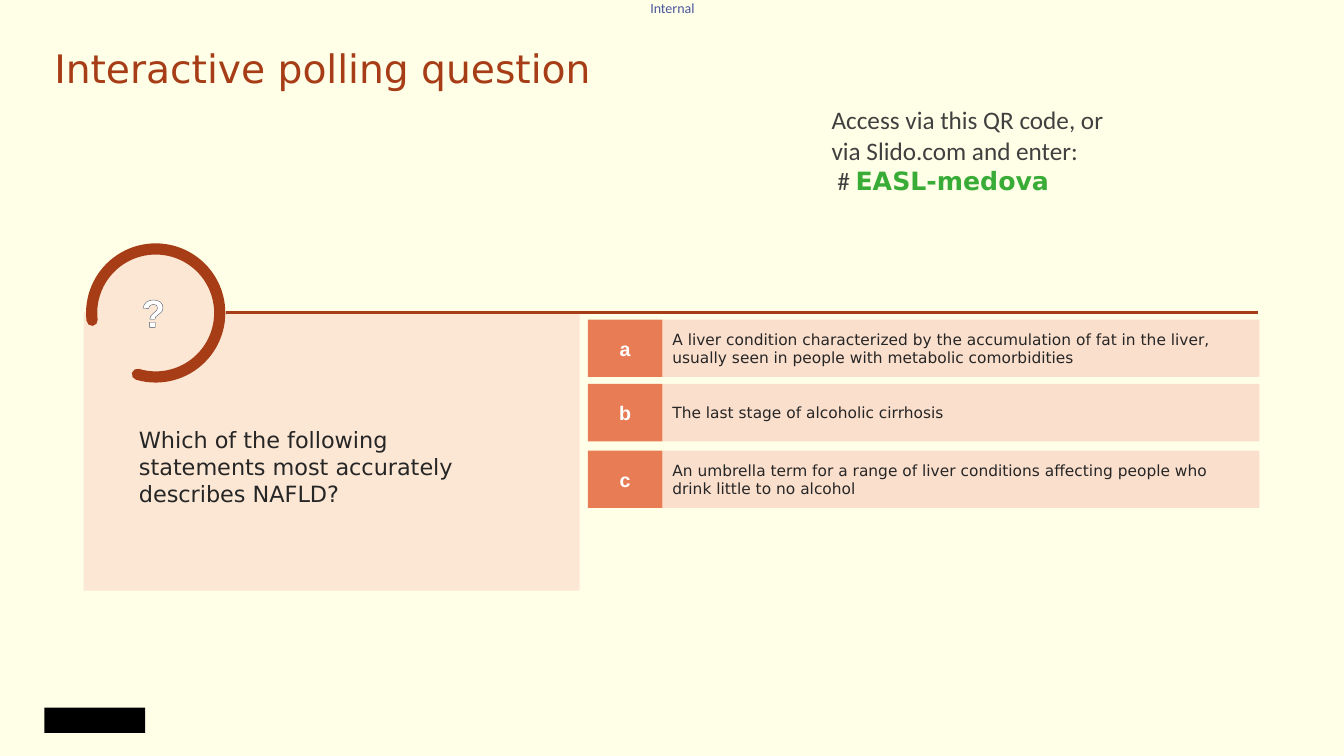
from lxml import etree
from pptx import Presentation
from pptx.dml.color import RGBColor as Rgb
from pptx.enum.shapes import MSO_CONNECTOR as Connector, MSO_SHAPE as Preset
from pptx.enum.text import MSO_ANCHOR as Anchor, PP_ALIGN as Align
from pptx.oxml.ns import qn
from pptx.util import Inches, Pt

THEME = {
    "background": "FFFFE7",
    "rust": "A63D16",
    "panel": "FCE7D4",
    "answer": "FBDFCD",
    "letter": "E87C54",
    "logo": "000000",
    "outline": "44546A",
    "label": {"name": "Calibri", "size": 10, "color": "4A569E"},
    "title": {"name": "DejaVu Sans", "size": 28, "color": "A63D16"},
    "access": {"name": "Calibri", "size": 18, "color": "404040"},
    "code": {"name": "DejaVu Sans", "size": 18, "color": "39AC37", "bold": True},
    "mark": {"name": "Arial", "size": 28, "color": "FFFFFF", "bold": True},
    "question": {"name": "DejaVu Sans", "size": 16, "color": "262626"},
    "answer_text": {"name": "DejaVu Sans", "size": 11, "color": "262626"},
    "letter_text": {"name": "Arial", "size": 14, "color": "FFFFFF", "bold": True},
}

presentation = Presentation()
presentation.slide_width = Inches(13.33)
presentation.slide_height = Inches(7.5)
slide = presentation.slides.add_slide(presentation.slide_layouts[6])
slide.background.fill.solid()
slide.background.fill.fore_color.rgb = Rgb.from_string(THEME["background"])


def add_block(preset, box, fill=None):
    shape = slide.shapes.add_shape(preset, *map(Inches, box))
    shape.shadow.inherit = False
    shape.line.fill.background()
    if fill:
        shape.fill.solid()
        shape.fill.fore_color.rgb = Rgb.from_string(THEME[fill])
    else:
        shape.fill.background()
    return shape


def write(shape, parts, align=Align.LEFT, **frame_format):
    frame = shape.text_frame
    for name, value in {"word_wrap": True, **frame_format}.items():
        setattr(frame, name, value)
    paragraph = frame.paragraphs[0]
    paragraph.alignment = align
    for text, style in parts:
        for index, line in enumerate(text.split("\n")):
            if index:
                paragraph.add_line_break()
            run = paragraph.add_run()
            run.text = line
            values = dict(THEME[style])
            run.font.color.rgb = Rgb.from_string(values.pop("color"))
            values["size"] = Pt(values["size"])
            for name, value in values.items():
                setattr(run.font, name, value)
    return paragraph


add_block(Preset.RECTANGLE, (0.44, 7.02, 1, 0.25), "logo")

no_margins = dict.fromkeys(("margin_left", "margin_top", "margin_right", "margin_bottom"), 0)
text_boxes = [
    ((6.45, 0, 0.47, 0.17), [("Internal", "label")], {"word_wrap": False, **no_margins}),
    ((0.44, 0.39, 12.43, 0.57), [("Interactive polling question", "title")],
     {"vertical_anchor": Anchor.MIDDLE}),
    ((8.15, 0.99, 2.93, 1.01),
     [("Access via this QR code, or\nvia Slido.com and enter:\n # ", "access"),
      ("EASL-medova", "code")], {}),
]
for box, parts, frame_format in text_boxes:
    write(slide.shapes.add_textbox(*map(Inches, box)), parts, **frame_format)

add_block(Preset.RECTANGLE, (0.83, 3.1, 4.92, 2.76), "panel")

rule = slide.shapes.add_connector(
    Connector.STRAIGHT, Inches(2.24), Inches(3.1), Inches(12.48), Inches(3.1))
rule.line.color.rgb = Rgb.from_string(THEME["rust"])
rule.line.width = Pt(2.25)
etree.SubElement(rule._element.spPr, qn("a:effectLst"))

add_block(Preset.OVAL, (0.97, 2.52, 1.15, 1.15), "panel")

ring = add_block(Preset.ARC, (0.91, 2.47, 1.27, 1.27))
ring.adjustments[0] = 173.4 * 0.6
ring.adjustments[1] = 106.6 * 0.6
ring.line.color.rgb = Rgb.from_string(THEME["rust"])
ring.line.width = Pt(8)
ring.line._ln.set("cap", "rnd")

mark_box = slide.shapes.add_textbox(Inches(1.3), Inches(2.81), Inches(0.44), Inches(0.57))
mark = write(mark_box, [("?", "mark")], Align.CENTER, word_wrap=False)
outline = etree.Element(qn("a:ln"), w=str(Pt(0.8)))
outline_fill = etree.SubElement(outline, qn("a:solidFill"))
etree.SubElement(outline_fill, qn("a:srgbClr"), val=THEME["outline"])
mark.runs[0].font._element.insert(0, outline)

question_box = slide.shapes.add_textbox(Inches(1.28), Inches(4.17), Inches(3.84), Inches(0.91))
write(question_box,
      [("Which of the following statements most accurately describes NAFLD?", "question")],
      vertical_anchor=Anchor.MIDDLE)

answers = [
    ("a", 3.17, "A liver condition characterized by the accumulation of fat in the liver, "
                "usually seen in people with metabolic comorbidities"),
    ("b", 3.81, "The last stage of alcoholic cirrhosis"),
    ("c", 4.47, "An umbrella term for a range of liver conditions affecting people who "
                "drink little to no alcohol"),
]
for letter, top, answer in answers:
    bar = add_block(Preset.RECTANGLE, (6.57, top, 5.92, 0.57), "answer")
    write(bar, [(answer, "answer_text")], vertical_anchor=Anchor.MIDDLE)
    tile = add_block(Preset.RECTANGLE, (5.83, top, 0.74, 0.57), "letter")
    write(tile, [(letter, "letter_text")], Align.CENTER, vertical_anchor=Anchor.MIDDLE)

presentation.save("out.pptx")
